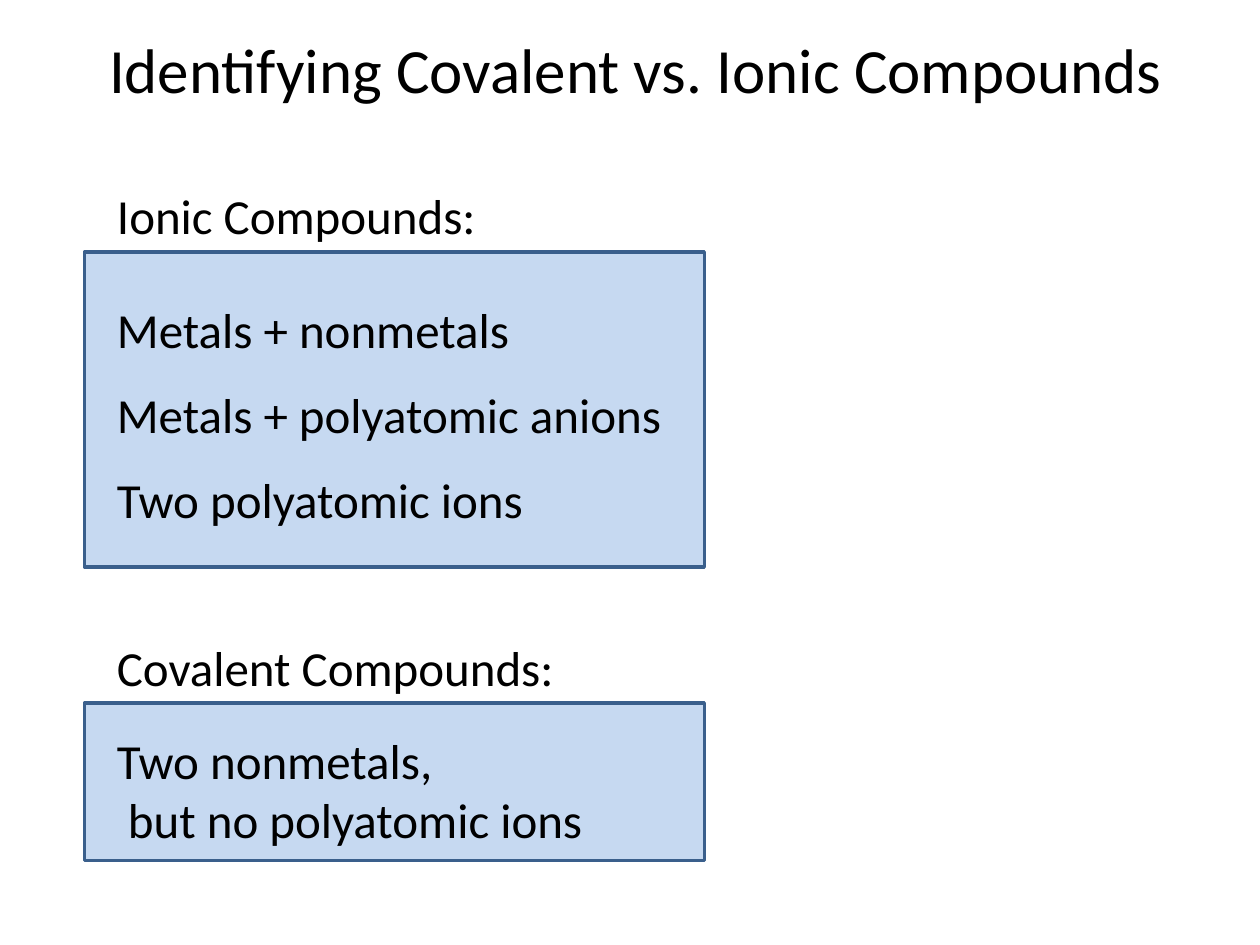
import pptx
import pptx.dml.color
import pptx.enum.shapes
import pptx.enum.text
import pptx.util

Inches = pptx.util.Inches
COLORS = {"text": "000000", "panel": "C6D9F1", "border": "3A5F8C"}
LEFT = 0.67
TEXT_LEFT = 0.83
PANEL_WIDTH = 4.92


def rgb(name):
    return pptx.dml.color.RGBColor.from_string(COLORS[name])


def set_text(tf, lines, size, align):
    tf.text = "\n".join(lines)
    font_format = {"name": "Calibri", "size": pptx.util.Pt(size), "bold": False}
    for p in tf.paragraphs:
        p.alignment = align
        for r in p.runs:
            for key, value in font_format.items():
                setattr(r.font, key, value)
            r.font.color.rgb = rgb("text")


def add_title(s, text):
    title = s.shapes.title
    position = {"left": LEFT, "top": 0.17, "width": 8.75, "height": 0.75}
    for key, value in position.items():
        setattr(title, key, Inches(value))
    tf = title.text_frame
    tf.vertical_anchor = pptx.enum.text.MSO_ANCHOR.MIDDLE
    tf.auto_size = pptx.enum.text.MSO_AUTO_SIZE.NONE
    set_text(tf, [text], 36, pptx.enum.text.PP_ALIGN.CENTER)


def add_panel(s, top, height):
    sp = s.shapes.add_shape(
        pptx.enum.shapes.MSO_SHAPE.RECTANGLE,
        Inches(LEFT), Inches(top), Inches(PANEL_WIDTH), Inches(height))
    sp.shadow.inherit = False
    sp.fill.solid()
    sp.fill.fore_color.rgb = rgb("panel")
    sp.line.color.rgb = rgb("border")
    sp.line.width = pptx.util.Pt(2)


def add_label(s, top, width, *lines):
    height = 0.1 + 0.47 * len(lines)
    sp = s.shapes.add_textbox(
        Inches(TEXT_LEFT), Inches(top), Inches(width), Inches(height))
    tf = sp.text_frame
    tf.word_wrap = False
    tf.auto_size = pptx.enum.text.MSO_AUTO_SIZE.SHAPE_TO_FIT_TEXT
    set_text(tf, lines, 28, pptx.enum.text.PP_ALIGN.LEFT)


def main():
    prs = pptx.Presentation()
    prs.slide_width = Inches(10)
    prs.slide_height = Inches(7.5)
    s = prs.slides.add_slide(prs.slide_layouts[5])
    add_title(s, "Identifying Covalent vs. Ionic Compounds")

    add_label(s, 1.42, 3.08, "Ionic Compounds:")
    add_panel(s, 2, 2.5)
    ionic_pairs = [
        ("Metals + nonmetals", 3.49),
        ("Metals + polyatomic anions", 4.56),
        ("Two polyatomic ions", 3.46),
    ]
    for i, (text, width) in enumerate(ionic_pairs):
        add_label(s, 2.33 + 0.675 * i, width, text)

    add_label(s, 5.01, 3.7, "Covalent Compounds:")
    add_panel(s, 5.58, 1.25)
    add_label(s, 5.75, 4.07, "Two nonmetals,", " but no polyatomic ions")
    prs.save("out.pptx")


if __name__ == "__main__":
    main()
